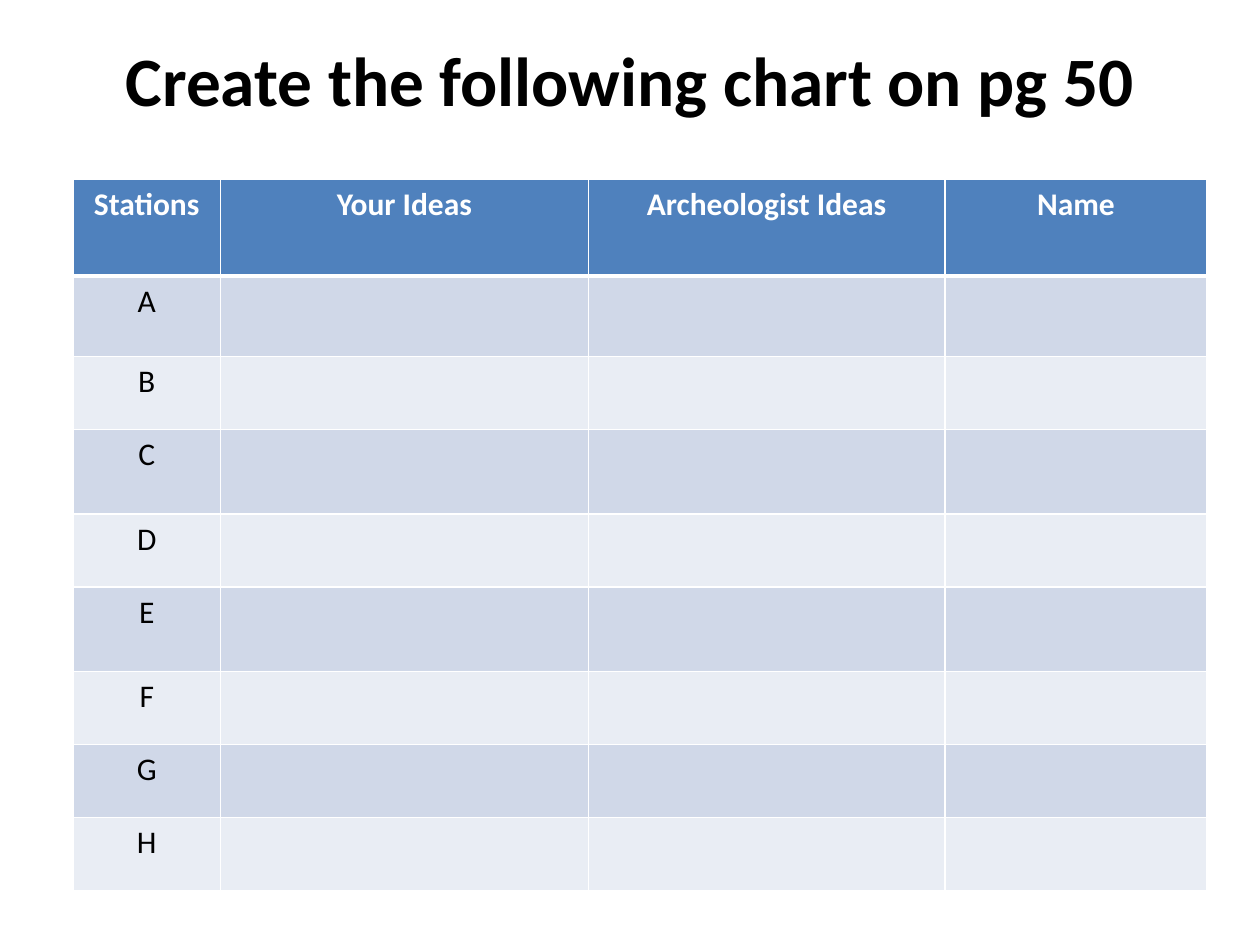
from typing import NamedTuple

from lxml.etree import SubElement
from pptx import Presentation
from pptx.dml.color import RGBColor
from pptx.enum.text import MSO_ANCHOR, PP_ALIGN
from pptx.oxml.ns import qn
from pptx.util import Inches, Pt


class RowStyle(NamedTuple):
    fill: str
    text_color: str
    bold: bool
    bottom_border: float


HEADER_STYLE = RowStyle("4F81BD", "FFFFFF", True, 3)
BAND_STYLES = (
    RowStyle("D0D8E8", "000000", False, 1),
    RowStyle("E9EDF4", "000000", False, 1),
)
BORDER_COLOR = "FFFFFF"
HEADINGS = ("Stations", "Your Ideas", "Archeologist Ideas", "Name")
STATIONS = "ABCDEFGH"
COLUMN_WIDTHS = (1.17, 2.92, 2.83, 2.08)
ROW_HEIGHTS = (0.77, 0.64, 0.58, 0.67, 0.58, 0.67, 0.58, 0.58, 0.58)


def hex_color(value: str) -> RGBColor:
    return RGBColor.from_string(value)


def write_text(frame, text: str, *, size: float, color: str, bold: bool) -> None:
    paragraph = frame.paragraphs[0]
    paragraph.alignment = PP_ALIGN.CENTER
    run = paragraph.add_run()
    run.text = text
    run.font.name = "Calibri"
    run.font.size = Pt(size)
    run.font.bold = bold
    run.font.color.rgb = hex_color(color)


def set_borders(cell, top: float, bottom: float) -> None:
    properties = cell._tc.get_or_add_tcPr()
    widths = {"a:lnL": 1, "a:lnR": 1, "a:lnT": top, "a:lnB": bottom}
    for tag, width in widths.items():
        line = SubElement(properties, qn(tag), w=str(Pt(width)))
        fill = SubElement(line, qn("a:solidFill"))
        SubElement(fill, qn("a:srgbClr"), val=BORDER_COLOR)


def add_title(slide, text: str) -> None:
    title = slide.shapes.title
    title.left, title.top = Inches(0.5), 0
    title.width, title.height = Inches(9), Inches(1.25)
    title.text_frame.vertical_anchor = MSO_ANCHOR.MIDDLE
    write_text(title.text_frame, text, size=39.6, color="000000", bold=True)


def add_station_table(slide) -> None:
    rows = [HEADINGS] + [(station, "", "", "") for station in STATIONS]
    styles = [HEADER_STYLE] + [BAND_STYLES[i % 2] for i in range(len(STATIONS))]
    table = slide.shapes.add_table(
        len(rows), len(HEADINGS), Inches(0.58), Inches(1.42),
        Inches(sum(COLUMN_WIDTHS)), Inches(sum(ROW_HEIGHTS)),
    ).table
    for column, width in zip(table.columns, COLUMN_WIDTHS):
        column.width = Inches(width)
    for row, height in zip(table.rows, ROW_HEIGHTS):
        row.height = Inches(height)

    top_border = 1
    for row, texts, style in zip(table.rows, rows, styles):
        for cell, text in zip(row.cells, texts):
            set_borders(cell, top_border, style.bottom_border)
            cell.fill.solid()
            cell.fill.fore_color.rgb = hex_color(style.fill)
            if text:
                write_text(cell.text_frame, text, size=18,
                           color=style.text_color, bold=style.bold)
        top_border = style.bottom_border


def main() -> None:
    presentation = Presentation()
    presentation.slide_width = Inches(10)
    presentation.slide_height = Inches(7.5)
    title_only = presentation.slide_layouts[5]
    slide = presentation.slides.add_slide(title_only)
    add_title(slide, "Create the following chart on pg 50")
    add_station_table(slide)
    presentation.save("out.pptx")


if __name__ == "__main__":
    main()
